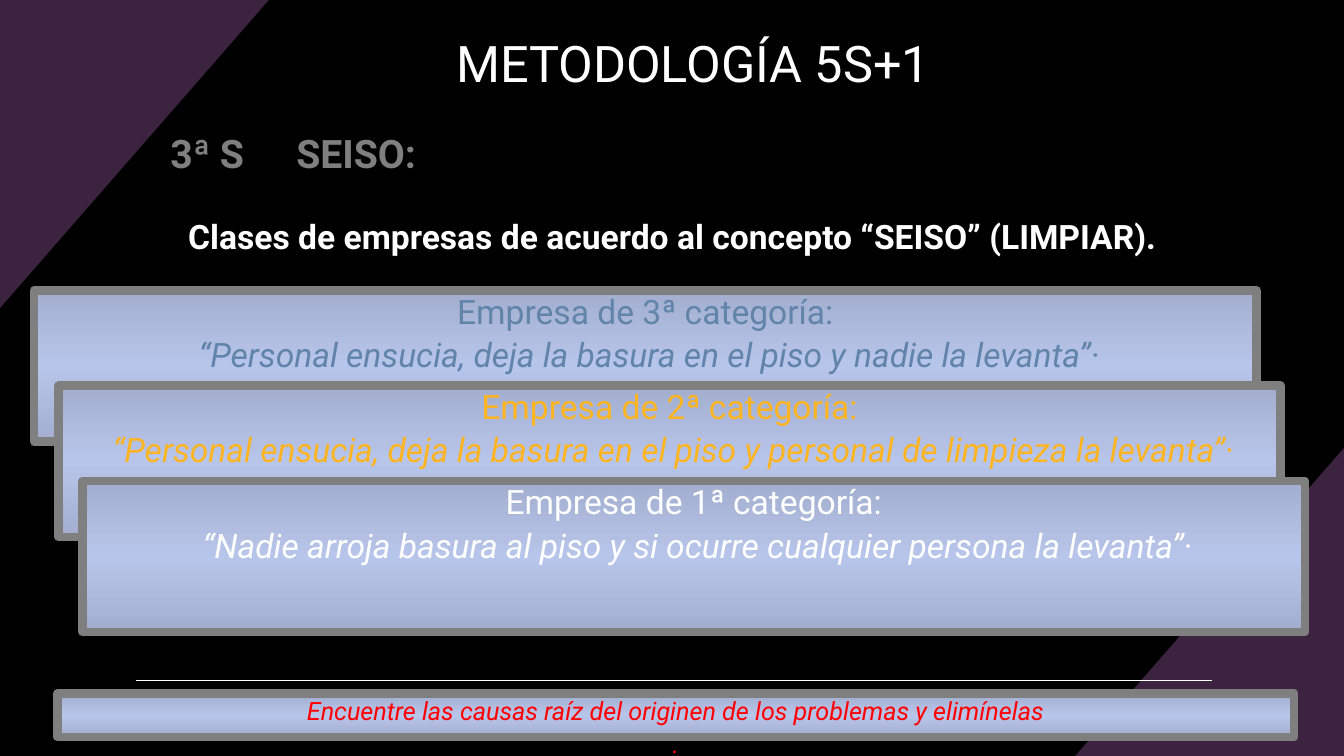
from copy import deepcopy

from lxml import etree
from pptx import Presentation
from pptx.dml.color import RGBColor
from pptx.enum.shapes import MSO_CONNECTOR, MSO_SHAPE
from pptx.enum.text import MSO_ANCHOR, MSO_AUTO_SIZE, PP_ALIGN
from pptx.oxml.ns import qn
from pptx.util import Pt

CENTER, LEFT = PP_ALIGN.CENTER, PP_ALIGN.LEFT
TOP, MIDDLE = MSO_ANCHOR.TOP, MSO_ANCHOR.MIDDLE
NO_AUTOFIT = MSO_AUTO_SIZE.NONE
RECTANGLE, STRAIGHT = MSO_SHAPE.RECTANGLE, MSO_CONNECTOR.STRAIGHT

FONT = "Roboto"
COLORS = {
    "black": "000000", "white": "FFFFFF", "purple": "3C2441", "gray": "7F7F7F",
    "edge": "A3AECF", "middle": "B8C5EA",
    "blue": "6184AA", "amber": "FFB521", "red": "FF0000",
}

TITLE = "METODOLOGÍA 5S+1"
STEP = "3ª S \tSEISO:"
SUBTITLE = "Clases de empresas de acuerdo al concepto “SEISO” (LIMPIAR)."
CATEGORIES = [
    ("Empresa de 3ª categoría:",
     " “Personal ensucia, deja la basura en el piso y nadie la levanta”·", "blue"),
    ("Empresa de 2ª categoría:",
     " “Personal ensucia, deja la basura en el piso y personal de limpieza la levanta”·", "amber"),
    ("Empresa de 1ª categoría:",
     " “Nadie arroja basura al piso y si ocurre cualquier persona la levanta”·", "white"),
]
CONCLUSION = ["Encuentre las causas raíz del originen de los problemas y elimínelas", "."]

WIDTH, HEIGHT = 960, 540
CORNER_WIDTH, CORNER_HEIGHT = 192, 220
CARD_LEFT, CARD_TOP, CARD_WIDTH, CARD_HEIGHT = 24.5, 207.5, 873, 108
CARD_STEP_X, CARD_STEP_Y = 17.3, 68


def rgb(name):
    return RGBColor.from_string(COLORS[name])


def place(shape, left, top, width, height):
    shape.left, shape.top = Pt(left), Pt(top)
    shape.width, shape.height = Pt(width), Pt(height)


def write(shape, lines, anchor=TOP, align=CENTER, hanging=0, tab=None, **spacing):
    """Fill a shape with one paragraph per (text, color, font format) line."""
    frame = shape.text_frame
    frame.auto_size = NO_AUTOFIT
    frame.word_wrap = True
    frame.vertical_anchor = anchor
    for index, (text, color, font_format) in enumerate(lines):
        paragraph = frame.add_paragraph() if index else frame.paragraphs[0]
        paragraph.alignment = align
        for name, value in spacing.items():
            setattr(paragraph, name, value)
        properties = paragraph._p.get_or_add_pPr()
        properties.set("marL", str(Pt(hanging)))
        properties.set("indent", str(-Pt(hanging)))
        etree.SubElement(properties, qn("a:buNone"))
        if tab:
            tabs = etree.SubElement(properties, qn("a:tabLst"))
            etree.SubElement(tabs, qn("a:tab"), pos=str(Pt(tab)), algn="l")
        run = paragraph.add_run()
        run.text = text
        run.font.name = FONT
        run.font.color.rgb = rgb(color)
        for name, value in font_format.items():
            setattr(run.font, name, value)


def add_corner(slide, points):
    builder = slide.shapes.build_freeform(Pt(points[0][0]), Pt(points[0][1]))
    builder.add_line_segments([(Pt(x), Pt(y)) for x, y in points[1:]])
    corner = builder.convert_to_shape()
    corner.shadow.inherit = False
    corner.fill.solid()
    corner.fill.fore_color.rgb = rgb("purple")
    corner.line.fill.background()


def add_panel(slide, box, lines, space):
    panel = slide.shapes.add_shape(RECTANGLE, *map(Pt, box))
    panel.shadow.inherit = False
    panel.line.color.rgb = rgb("gray")
    panel.line.width = Pt(6)
    panel.fill.gradient()
    panel.fill.gradient_angle = 270
    stop_list = panel._element.spPr.find(".//" + qn("a:gsLst"))
    stop_list.insert(1, deepcopy(stop_list[0]))
    stops = zip(panel.fill.gradient_stops, ("edge", "middle", "edge"), (0, 0.5, 1))
    for stop, color, position in stops:
        stop.color.rgb = rgb(color)
        stop.position = position
    write(panel, lines, hanging=27, line_spacing=0.9, space_before=Pt(space))


def main():
    presentation = Presentation()
    presentation.slide_width, presentation.slide_height = Pt(WIDTH), Pt(HEIGHT)
    slide = presentation.slides.add_slide(presentation.slide_layouts[1])
    slide.background.fill.solid()
    slide.background.fill.fore_color.rgb = rgb("black")

    add_corner(slide, [(0, 0), (CORNER_WIDTH, 0), (0, CORNER_HEIGHT)])
    add_corner(slide, [(WIDTH, HEIGHT), (WIDTH - CORNER_WIDTH, HEIGHT),
                       (WIDTH, HEIGHT - CORNER_HEIGHT)])
    rule = slide.shapes.add_connector(STRAIGHT, Pt(97), Pt(486), Pt(865.5), Pt(486))
    rule.line.color.rgb = rgb("white")
    rule.line.width = Pt(1)
    etree.SubElement(rule._element.spPr, qn("a:effectLst"))

    title, body = slide.placeholders
    place(title, 172, 23, 646.5, 42.5)
    write(title, [(TITLE, "white", {"size": Pt(36)})], anchor=MIDDLE)
    tight = {"hanging": 18, "line_spacing": 0.8, "space_before": Pt(10)}
    place(body, 114.5, 95, 704, 83)
    write(body, [(STEP, "gray", {"size": Pt(28), "bold": True})],
          align=LEFT, tab=90, **tight)
    subtitle = slide.shapes.add_textbox(Pt(55.5), Pt(156), Pt(849.5), Pt(37.5))
    write(subtitle, [(SUBTITLE, "white", {"size": Pt(24), "bold": True})], **tight)

    add_panel(slide, (41, 495.5, 883.5, 31),
              [(text, "red", {"size": Pt(18), "italic": True}) for text in CONCLUSION], 4)
    for index, (heading, quote, color) in enumerate(CATEGORIES):
        box = (CARD_LEFT + index * CARD_STEP_X, CARD_TOP + index * CARD_STEP_Y,
               CARD_WIDTH, CARD_HEIGHT)
        add_panel(slide, box, [(heading, color, {"size": Pt(24)}),
                               (quote, color, {"size": Pt(24), "italic": True})], 5)

    presentation.save("out.pptx")


if __name__ == "__main__":
    main()
